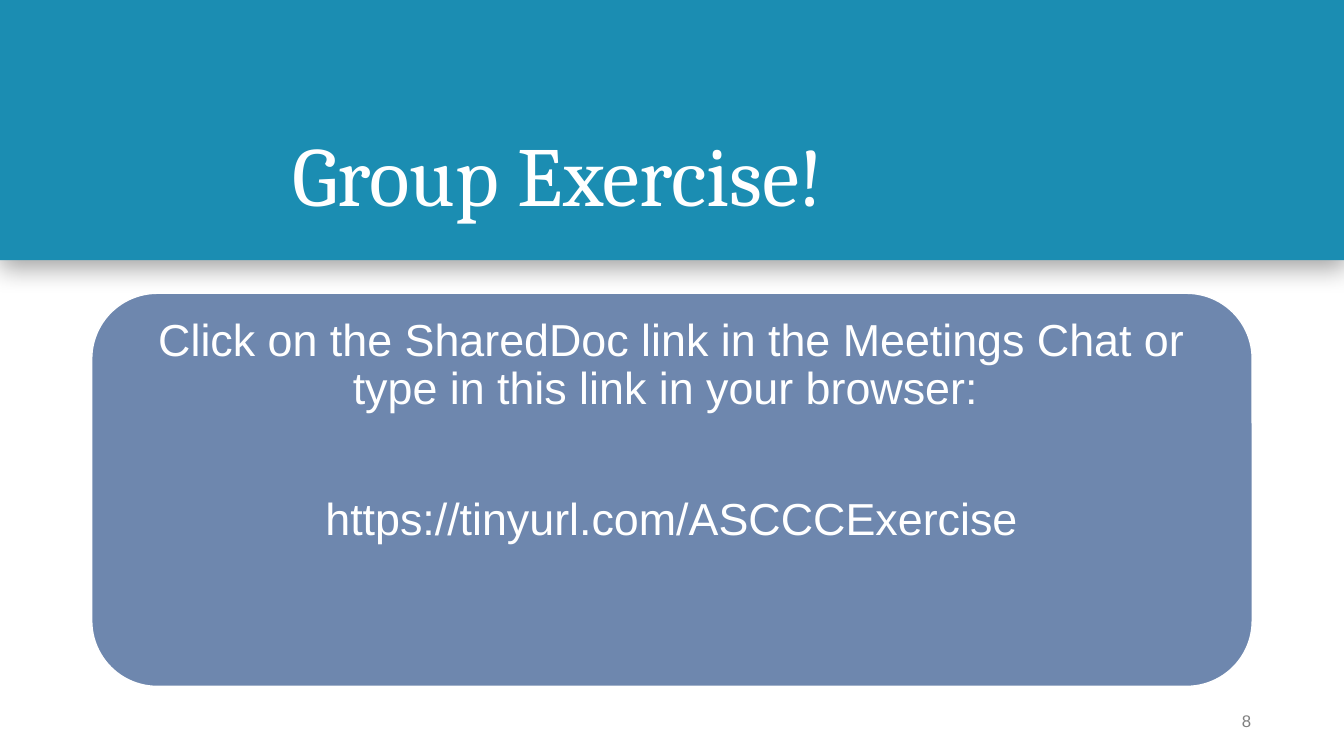
from lxml import etree
from pptx import Presentation
from pptx.dml.color import RGBColor
from pptx.enum.shapes import MSO_SHAPE
from pptx.enum.text import MSO_ANCHOR, PP_ALIGN
from pptx.oxml import parse_xml
from pptx.util import Inches, Pt

TEAL = RGBColor(0x1B, 0x8D, 0xB2)
SLATE = RGBColor(0x6E, 0x87, 0xAE)
WHITE = RGBColor(0xFF, 0xFF, 0xFF)
GRAY = RGBColor(0x80, 0x80, 0x80)

BAND_SHADOW = (
    '<a:effectLst xmlns:a="http://schemas.openxmlformats.org/drawingml/2006/main">'
    f'<a:outerShdw blurRad="{Pt(18)}" dist="{Pt(5)}" dir="5400000" rotWithShape="0">'
    '<a:srgbClr val="000000"><a:alpha val="35000"/></a:srgbClr>'
    '</a:outerShdw></a:effectLst>'
)


class SlideBuilder:
    """Holds the text style and the slide being built."""

    body_font = "Arial"
    heading_font = "Cambria"

    def __init__(self, slide):
        self.slide = slide

    def panel(self, preset, box, fill, line=None):
        panel = self.slide.shapes.add_shape(preset, *map(Inches, box))
        panel.shadow.inherit = False
        panel.fill.solid()
        panel.fill.fore_color.rgb = fill
        if line is None:
            panel.line.fill.background()
        else:
            panel.line.color.rgb = line
            panel.line.width = Pt(1)
        return panel

    def band(self, box, fill):
        band = self.panel(MSO_SHAPE.RECTANGLE, box, fill)
        properties = band.fill._xPr
        properties.remove(properties.find("{*}effectLst"))
        properties.append(parse_xml(BAND_SHADOW))

    def text(self, box, paragraphs, size, color, font=None, frame_format=None,
             paragraph_format=None):
        frame = self.slide.shapes.add_textbox(*map(Inches, box)).text_frame
        for key, value in {"word_wrap": True, **(frame_format or {})}.items():
            setattr(frame, key, value)
        for index, wording in enumerate(paragraphs):
            paragraph = frame.paragraphs[0] if index == 0 else frame.add_paragraph()
            for key, value in (paragraph_format or {}).items():
                setattr(paragraph, key, value)
            run = paragraph.add_run()
            run.text = wording
            for key, value in {"name": font or self.body_font, "size": Pt(size)}.items():
                setattr(run.font, key, value)
            run.font.color.rgb = color


def main():
    presentation = Presentation()
    presentation.slide_width = Inches(13.33)
    presentation.slide_height = Inches(7.5)
    builder = SlideBuilder(presentation.slides.add_slide(presentation.slide_layouts[6]))

    # Title band
    builder.band((0, 0, 13.33, 2.58), TEAL)
    builder.text((2.8, 0.44, 9.62, 1.84), ["Group Exercise!"], 60, WHITE,
                 font=builder.heading_font,
                 frame_format={"vertical_anchor": MSO_ANCHOR.BOTTOM},
                 paragraph_format={"line_spacing": 0.9})

    # Instructions on the rounded panel
    builder.panel(MSO_SHAPE.ROUNDED_RECTANGLE, (0.91, 2.91, 11.51, 3.9), SLATE, WHITE)
    builder.text((1.1, 3.1, 11.13, 3.52),
                 ["Click on the SharedDoc link in the Meetings Chat or "
                  "type in this link in your browser: ",
                  "https://tinyurl.com/ASCCCExercise"],
                 32, WHITE,
                 frame_format={"vertical_anchor": MSO_ANCHOR.TOP,
                               "margin_left": Inches(0.13),
                               "margin_right": Inches(0.13)},
                 paragraph_format={"alignment": PP_ALIGN.CENTER, "line_spacing": 0.9,
                                   "space_after": Pt(59)})

    # Slide number
    builder.text((11.41, 6.95, 1, 0.4), ["8"], 12, GRAY,
                 frame_format={"vertical_anchor": MSO_ANCHOR.MIDDLE, "margin_right": 0},
                 paragraph_format={"alignment": PP_ALIGN.RIGHT})

    presentation.save("out.pptx")


if __name__ == "__main__":
    main()
